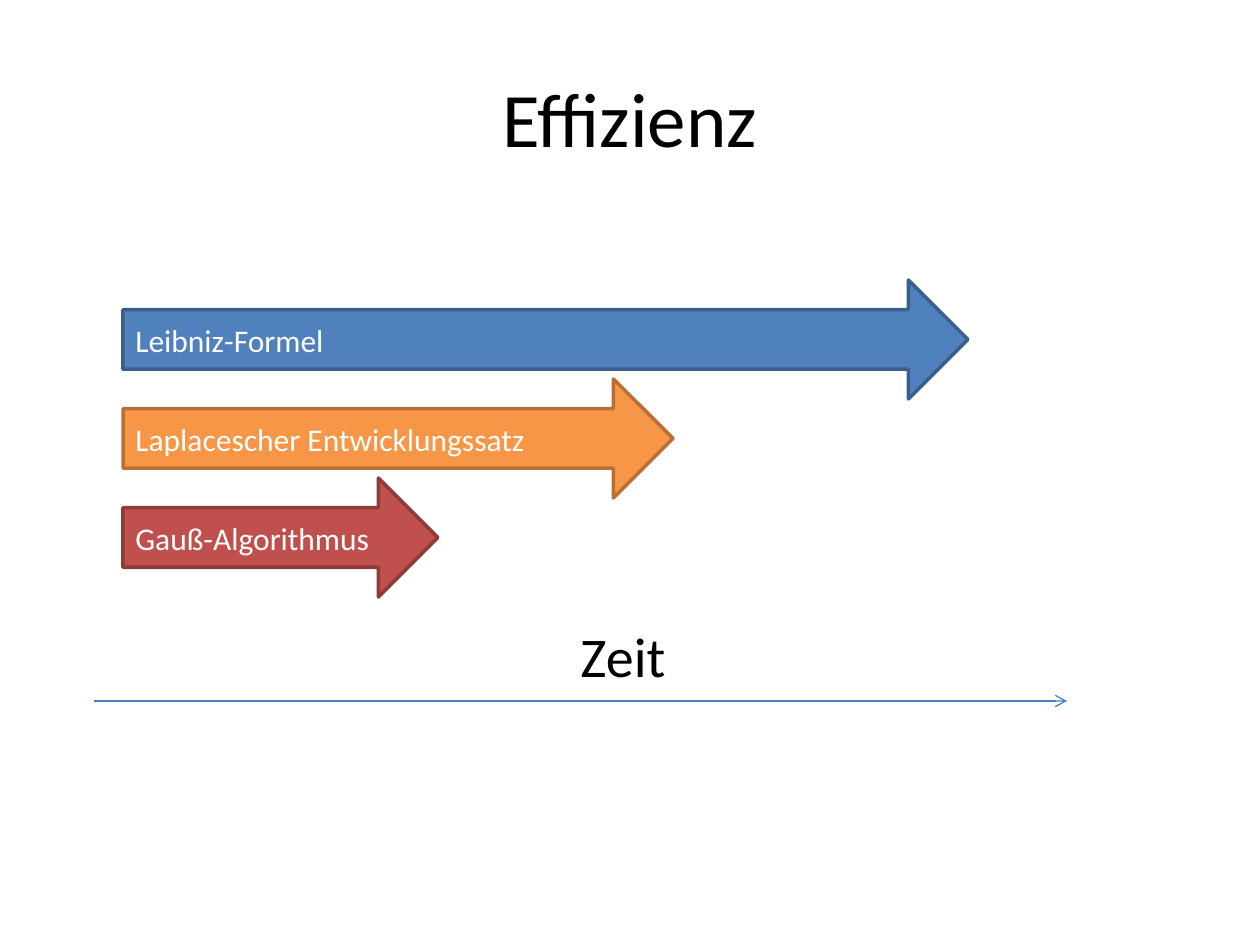
from lxml.etree import SubElement
from pptx import Presentation
from pptx.dml.color import RGBColor
from pptx.enum.shapes import MSO_CONNECTOR as Connector, MSO_SHAPE as Shape
from pptx.enum.text import MSO_ANCHOR as Anchor, PP_ALIGN as Align
from pptx.oxml.ns import qn
from pptx.util import Inches, Pt

EMU_PER_PX = Inches(1) / 126
BLACK = RGBColor(0x00, 0x00, 0x00)
WHITE = RGBColor(0xFF, 0xFF, 0xFF)
BLUE = RGBColor(0x4F, 0x81, 0xBD)
DARK_BLUE = RGBColor(0x3A, 0x5F, 0x8C)
ORANGE = RGBColor(0xF7, 0x96, 0x46)
DARK_ORANGE = RGBColor(0xB7, 0x6F, 0x34)
RED = RGBColor(0xC0, 0x50, 0x4D)
DARK_RED = RGBColor(0x8E, 0x3B, 0x39)
AXIS_BLUE = RGBColor(0x4B, 0x7E, 0xBC)

ARROW_LEFT, ARROW_TOP, ARROW_HEIGHT, ARROW_GAP = 123, 280, 119, -20
METHODS = [
    ("Leibniz-Formel", 845, BLUE, DARK_BLUE),
    ("Laplacescher Entwicklungssatz", 550, ORANGE, DARK_ORANGE),
    ("Gauß-Algorithmus", 315, RED, DARK_RED),
]


def px(*lengths):
    return [round(length * EMU_PER_PX) for length in lengths]


class SlideBuilder:
    font = "Calibri"

    def __init__(self, slide):
        self.slide = slide

    def set_text(self, shape, text, size, color, align):
        frame = shape.text_frame
        frame.text = text
        frame.word_wrap = True
        frame.vertical_anchor = Anchor.MIDDLE
        para = frame.paragraphs[0]
        para.alignment = align
        font = para.runs[0].font
        font.name, font.size, font.color.rgb = self.font, Pt(size), color
        return para

    def placeholder(self, index, text, size, left, top, width, height):
        """Fill a template placeholder with one centred line without a bullet."""
        box = self.slide.placeholders[index]
        box.left, box.top, box.width, box.height = px(left, top, width, height)
        para = self.set_text(box, text, size, BLACK, Align.CENTER)
        para.space_before = Pt(0)
        properties = para._p.get_or_add_pPr()
        properties.set("marL", "0")
        properties.set("indent", "0")
        SubElement(properties, qn("a:buNone"))

    def block_arrow(self, text, left, top, width, height, fill, outline):
        arrow = self.slide.shapes.add_shape(
            Shape.RIGHT_ARROW, *px(left, top, width, height))
        arrow.shadow.inherit = False
        arrow.fill.solid()
        arrow.fill.fore_color.rgb = fill
        arrow.line.color.rgb = outline
        arrow.line.width = Pt(2)
        self.set_text(arrow, text, 18, WHITE, Align.LEFT)

    def axis(self, start, end, y):
        line = self.slide.shapes.add_connector(
            Connector.STRAIGHT, *px(start, y, end, y))
        line.line.color.rgb = AXIS_BLUE
        line.line.width = Pt(0.75)
        SubElement(line.line._get_or_add_ln(), qn("a:tailEnd"), type="arrow")
        SubElement(line._element.spPr, qn("a:effectLst"))


def main():
    deck = Presentation()
    deck.slide_width, deck.slide_height = px(1260, 945)
    builder = SlideBuilder(deck.slides.add_slide(deck.slide_layouts[1]))
    builder.placeholder(0, "Effizienz", 44, 63, 38, 1134, 157)
    builder.placeholder(1, "Zeit", 32, 63, 615, 1120, 80)
    for row, (name, width, fill, outline) in enumerate(METHODS):
        top = ARROW_TOP + row * (ARROW_HEIGHT + ARROW_GAP)
        builder.block_arrow(
            name, ARROW_LEFT, top, width, ARROW_HEIGHT, fill, outline)
    builder.axis(94, 1067, 701)
    deck.save("out.pptx")


if __name__ == "__main__":
    main()
